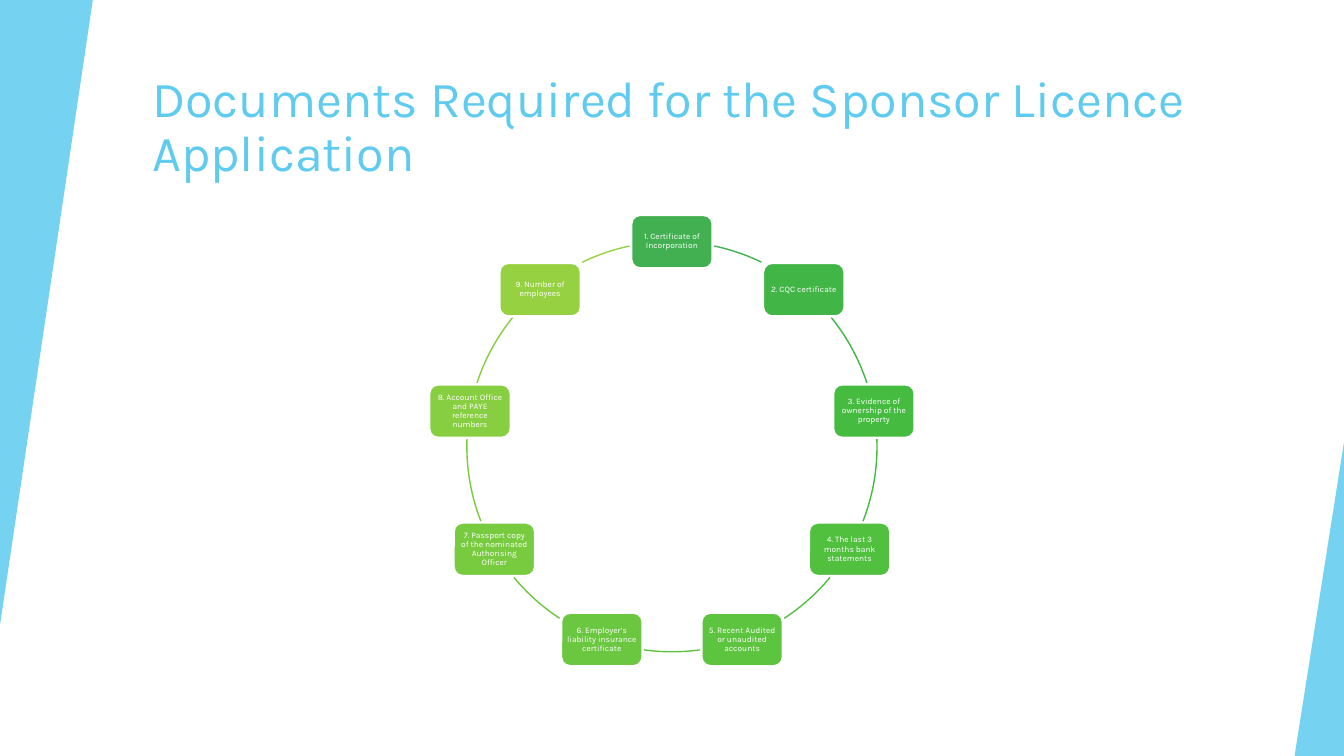
from dataclasses import dataclass
from math import cos, radians, sin

from lxml import etree
from pptx import Presentation
from pptx.dml.color import RGBColor
from pptx.enum.shapes import MSO_SHAPE
from pptx.enum.text import MSO_ANCHOR, PP_ALIGN
from pptx.oxml.ns import qn
from pptx.util import Pt

TRI, CARD, ARC = MSO_SHAPE.ISOSCELES_TRIANGLE, MSO_SHAPE.ROUNDED_RECTANGLE, MSO_SHAPE.ARC
MIDDLE, LEFT, CENTER = MSO_ANCHOR.MIDDLE, PP_ALIGN.LEFT, PP_ALIGN.CENTER


@dataclass(frozen=True)
class Theme:
    """Colours, font and type sizes of the deck."""
    sky: str = "5FCBEF"
    white: str = "FFFFFF"
    font: str = "Karla"
    head: float = 36
    small: float = 6
    greens: tuple = ("42B051", "41B546", "45BB3F", "50C03E", "5CC43E",
                     "6AC73F", "78CB3F", "87CE40", "96D141")


THEME = Theme()
TITLE = "Documents Required for the Sponsor Licence Application"
DOCS = (
    "1. Certificate of Incorporation",
    "2. CQC certificate",
    "3. Evidence of ownership of the property",
    "4. The last 3 months bank statements",
    "5. Recent Audited or unaudited accounts",
    "6. Employer’s liability insurance certificate",
    "7. Passport copy of the nominated Authorising Officer",
    "8. Account Office and PAYE reference numbers",
    "9. Number of employees",
)


def put(item, vals):
    """Set each attribute named in vals on item."""
    for key, val in vals.items():
        setattr(item, key, val)


def paint(fill, tone):
    """Give a fill one solid colour."""
    fill.solid()
    fill.fore_color.rgb = RGBColor.from_string(tone)


def write(shape, text, size, tone, align, inset):
    """Fill a shape with one formatted paragraph."""
    frame = shape.text_frame
    frame.text = text
    put(frame, {"word_wrap": True, "vertical_anchor": MIDDLE})
    put(frame, {"margin_" + side: Pt(gap) for side, gap in inset.items()})
    para = frame.paragraphs[0]
    put(para, {"alignment": align, "line_spacing": 0.9})
    put(para.runs[0].font, {"name": THEME.font, "size": Pt(size)})
    para.runs[0].font.color.rgb = RGBColor.from_string(tone)


def draw(slide, kind, box):
    """Add a preset shape without shadow at a box in points."""
    shape = slide.shapes.add_shape(kind, *map(Pt, box))
    shape.shadow.inherit = False
    return shape


def wedge(slide, box, turn):
    """Add a translucent right-angled triangle at the slide edge."""
    shape = draw(slide, TRI, box)
    shape.adjustments[0] = 1
    shape.rotation = turn
    paint(shape.fill, THEME.sky)
    tint = shape.fill._xPr.find(qn("a:solidFill"))[0]
    etree.SubElement(tint, qn("a:alpha")).set("val", "85000")
    shape.line.fill.background()


def head(slide, box):
    """Place and format the title."""
    title = slide.shapes.title
    put(title, dict(zip(("left", "top", "width", "height"), map(Pt, box))))
    inset = {"left": 7.2, "right": 7.2, "top": 3.6, "bottom": 3.6}
    write(title, TITLE, THEME.head, THEME.sky, LEFT, inset)


def clear(mid, step, rad, wide, high):
    """Return the angle at which the circle leaves the card centred at mid."""
    pad, turn = 1, mid
    while (abs(cos(radians(turn)) - cos(radians(mid))) * rad < wide / 2 + pad
           and abs(sin(radians(turn)) - sin(radians(mid))) * rad < high / 2 + pad):
        turn += step
    return turn


def ring(slide, box):
    """Spread the document cards round the circle in box and join them by arcs."""
    left, top, size, _ = box
    rad, wide, high = size / 2, 58, 38
    gap = 360 / len(DOCS)
    inset = dict.fromkeys(("left", "right", "top", "bottom"), 2.2)
    for num, (text, tone) in enumerate(zip(DOCS, THEME.greens)):
        mid = num * gap - 90
        arc = draw(slide, ARC, box)
        ends = (clear(mid, 0.1, rad, wide, high),
                clear(mid + gap, -0.1, rad, wide, high))
        for spot, turn in enumerate(ends):
            arc.adjustments[spot] = turn % 360 * 0.6
        arc.fill.background()
        paint(arc.line.fill, tone)
        arc.line.width = Pt(1)
        x = left + rad + rad * cos(radians(mid)) - wide / 2
        y = top + rad + rad * sin(radians(mid)) - high / 2
        card = draw(slide, CARD, (x, y, wide, high))
        paint(card.fill, tone)
        paint(card.line.fill, THEME.white)
        card.line.width = Pt(1.5)
        write(card, text, THEME.small, THEME.white, CENTER, inset)


def main():
    """Build and save the slide."""
    deck = Presentation()
    put(deck, {"slide_width": Pt(960), "slide_height": Pt(540)})
    slide = deck.slides.add_slide(deck.slide_layouts[5])
    head(slide, (101.5, 48.2, 802.8, 86.4))
    wedge(slide, (0, 0, 66.3, 446.4), 180)
    wedge(slide, (924.7, 316, 35.3, 224), 0)
    ring(slide, (333.5, 172.6, 293, 293))
    deck.save("out.pptx")


if __name__ == "__main__":
    main()
